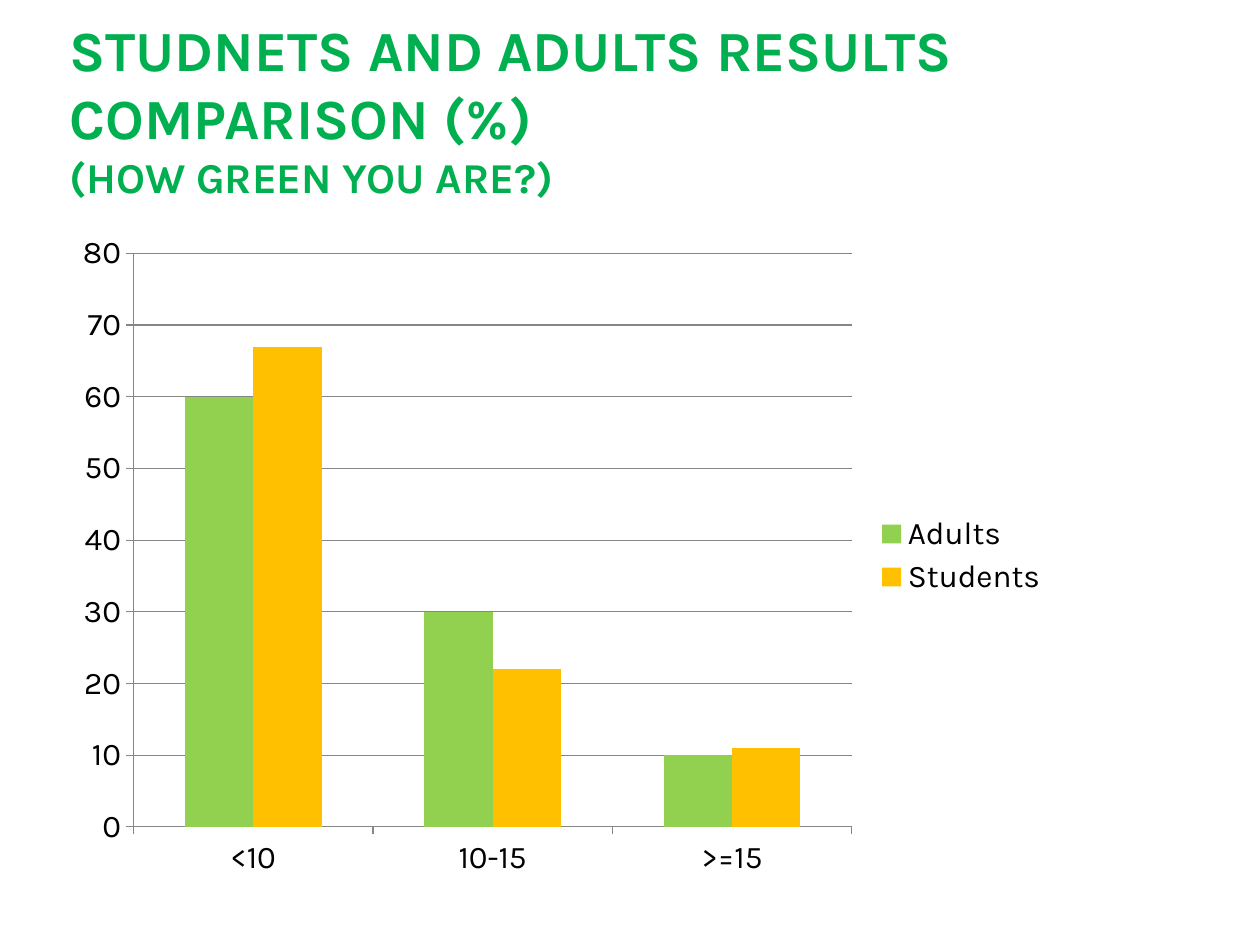
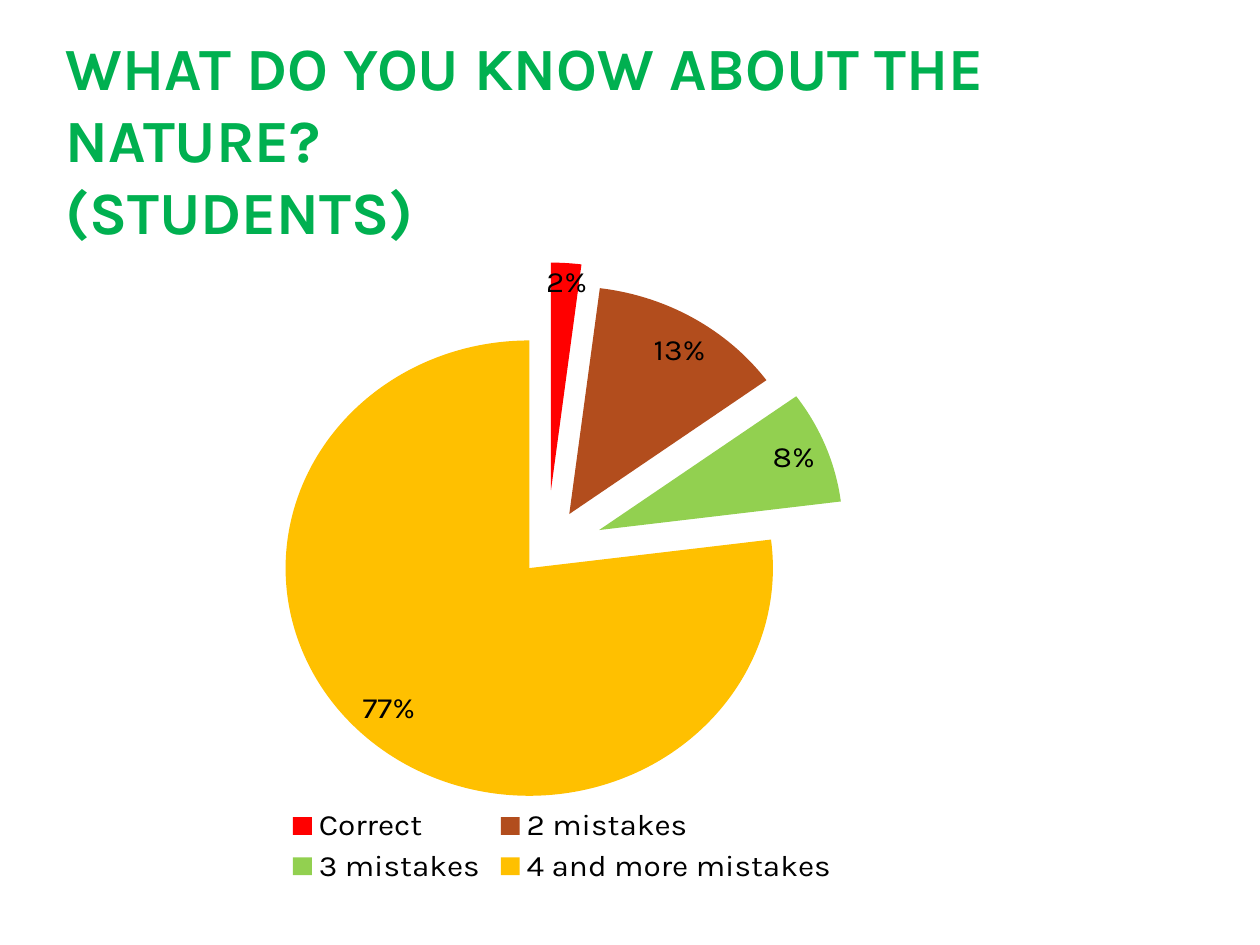
import pptx
import pptx.chart.data
import pptx.dml.color
import pptx.enum.chart
import pptx.enum.text
import pptx.util
from lxml import etree

Cm = pptx.util.Cm
Pt = pptx.util.Pt
RGB = pptx.dml.color.RGBColor.from_string
XL = pptx.enum.chart

theme = {
    "font": "Karla",
    "title": RGB("00B050"),
    "text": RGB("000000"),
    "grid": RGB("868686"),
    "green": RGB("92D050"),
    "amber": RGB("FFC000"),
    "red": RGB("FF0000"),
    "brown": RGB("B24D1D"),
    "subtitle_size": Pt(24.3),
    "chart_size": Pt(18),
}


def add_titled_slide(prs, left, top, size, title, subtitle, subtitle_size):
    s = prs.slides.add_slide(prs.slide_layouts[5])
    sp = s.shapes.title
    sp.left, sp.top, sp.width, sp.height = left, top, Cm(20.12), Cm(3.18)
    tf = sp.text_frame
    tf.word_wrap = True
    tf.auto_size = pptx.enum.text.MSO_AUTO_SIZE.NONE
    tf.vertical_anchor = pptx.enum.text.MSO_ANCHOR.BOTTOM
    tf.margin_left = tf.margin_right = Cm(0.13)
    tf.margin_top = tf.margin_bottom = 0
    p = tf.paragraphs[0]
    p.alignment = pptx.enum.text.PP_ALIGN.LEFT
    p.font.name = theme["font"]
    p.font.size = size
    p.font.bold = True
    p.font.color.rgb = theme["title"]
    p.add_run().text = title
    p.add_line_break()
    r = p.add_run()
    r.text = subtitle
    if subtitle_size != size:
        r.font.size = subtitle_size
    return s


def add_styled_chart(s, kind, categories, series, legend_position):
    data = pptx.chart.data.CategoryChartData()
    data.categories = categories
    for name, values in series:
        data.add_series(name, values)
    frame = s.shapes.add_chart(kind, Cm(1.27), Cm(4.47), Cm(20.12), Cm(13.46), data)
    chart = frame.chart
    chart.has_title = False
    chart.font.name = theme["font"]
    chart.font.size = theme["chart_size"]
    chart.font.color.rgb = theme["text"]
    chart.has_legend = True
    chart.legend.position = legend_position
    chart.legend.include_in_layout = False
    return chart


prs = pptx.Presentation()
prs.slide_width, prs.slide_height = Cm(25.4), Cm(19.05)

s = add_titled_slide(
    prs, Cm(1.27), Cm(0.89), Pt(32.4),
    "STUDNETS AND ADULTS RESULTS COMPARISON (%)",
    "(HOW GREEN YOU ARE?)", theme["subtitle_size"],
)
chart = add_styled_chart(
    s, XL.XL_CHART_TYPE.COLUMN_CLUSTERED, ["<10", "10-15", ">=15"],
    [("Adults", (60, 30, 10)), ("Students", (67, 22, 11))],
    XL.XL_LEGEND_POSITION.RIGHT,
)
plot = chart.plots[0]
plot.gap_width = 150
plot.overlap = 0
plot.vary_by_categories = False
for series, color in zip(plot.series, ("green", "amber")):
    series.format.fill.solid()
    series.format.fill.fore_color.rgb = theme[color]
chart.value_axis.has_major_gridlines = True
for axis in (chart.category_axis, chart.value_axis):
    axis.major_tick_mark = XL.XL_TICK_MARK.OUTSIDE
    axis.minor_tick_mark = XL.XL_TICK_MARK.NONE
for part in (chart.category_axis, chart.value_axis, chart.value_axis.major_gridlines):
    part.format.line.color.rgb = theme["grid"]
    part.format.line.width = Pt(0.75)

s = add_titled_slide(
    prs, Cm(1.19), Cm(1.78), Pt(34.2),
    "WHAT DO YOU KNOW ABOUT THE NATURE?", "(STUDENTS)", Pt(34.2),
)
chart = add_styled_chart(
    s, XL.XL_CHART_TYPE.PIE,
    ["Correct", "2 mistakes", "3 mistakes", "4 and more mistakes"],
    [("Series 1", (2, 13, 8, 77))], XL.XL_LEGEND_POSITION.BOTTOM,
)
plot = chart.plots[0]
plot.vary_by_categories = True
plot.has_data_labels = True
labels = plot.data_labels
labels.show_percentage = True
labels.show_value = False
labels.number_format = "0%"
labels.number_format_is_linked = False
labels.position = XL.XL_LABEL_POSITION.BEST_FIT

ns = "{http://schemas.openxmlformats.org/drawingml/2006/chart}"
slices = (("red", 26), ("brown", 18), ("green", 23), ("amber", 11))
for i, (color, explosion) in enumerate(slices):
    point = plot.series[0].points[i]
    point.format.fill.solid()
    point.format.fill.fore_color.rgb = theme[color]
    dpt = chart.element.findall(f".//{ns}dPt")[i]
    offset = etree.Element(f"{ns}explosion", val=str(explosion))
    dpt.find(f"{ns}spPr").addprevious(offset)

plot_area = chart.element.find(f".//{ns}plotArea")
layout = plot_area.find(f"{ns}layout")
if layout is None:
    layout = etree.Element(f"{ns}layout")
    plot_area.insert(0, layout)
manual = etree.SubElement(layout, f"{ns}manualLayout")
for tag, val in (("layoutTarget", "inner"), ("xMode", "edge"), ("yMode", "edge"),
                 ("x", "0.24"), ("y", "0.09"), ("w", "0.49"), ("h", "0.73")):
    etree.SubElement(manual, f"{ns}{tag}", val=val)

prs.save("out.pptx")
